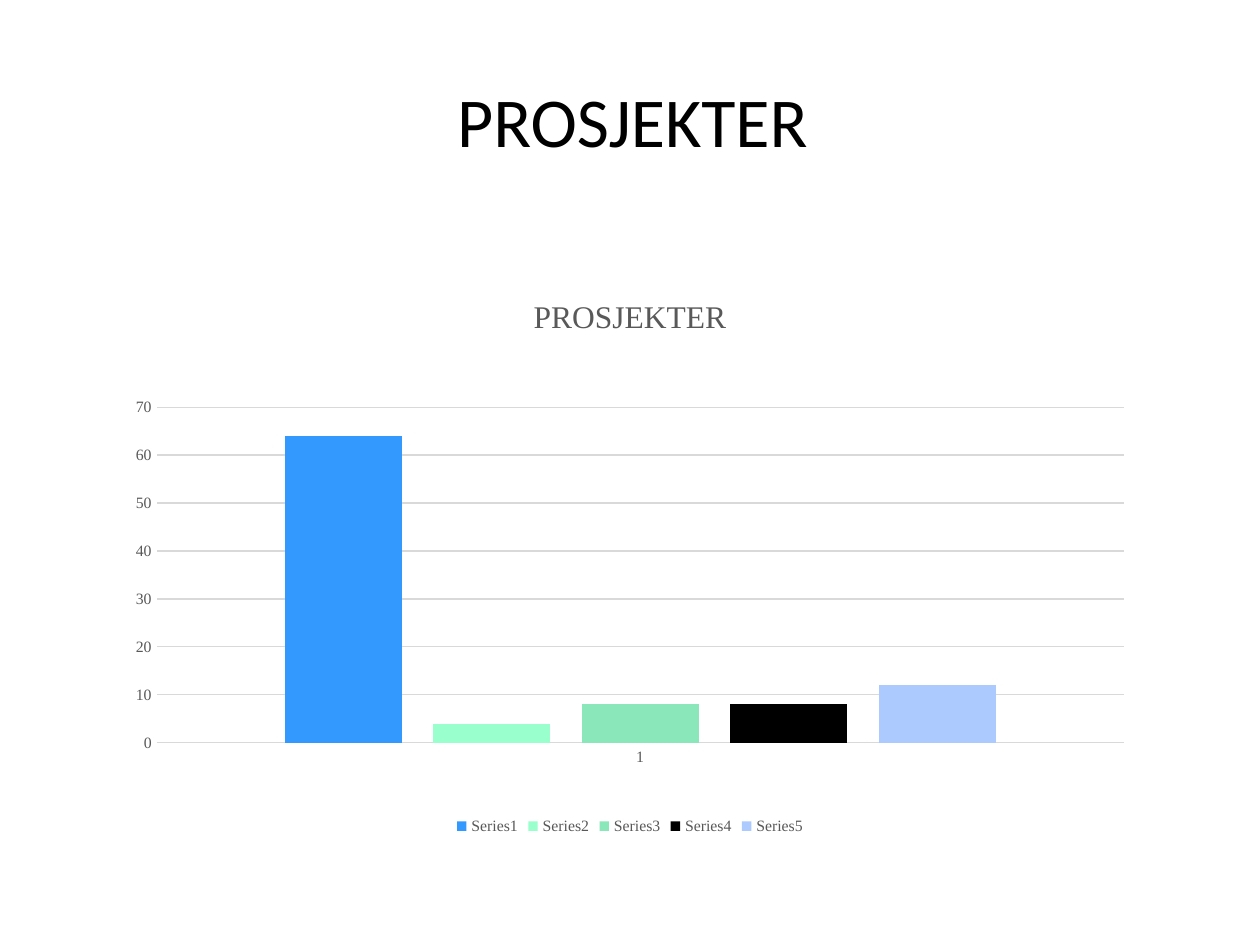
from lxml import etree
from pptx import Presentation
from pptx.chart.data import CategoryChartData
from pptx.dml.color import RGBColor
from pptx.enum.chart import XL_CHART_TYPE, XL_LEGEND_POSITION, XL_TICK_MARK
from pptx.enum.text import MSO_ANCHOR, PP_ALIGN
from pptx.oxml.ns import qn
from pptx.util import Inches, Pt

CLUSTERED = XL_CHART_TYPE.COLUMN_CLUSTERED
LEGEND_BOTTOM = XL_LEGEND_POSITION.BOTTOM
NO_TICK = XL_TICK_MARK.NONE
MIDDLE = MSO_ANCHOR.MIDDLE
CENTER = PP_ALIGN.CENTER

WIDTH, HEIGHT = Inches(10), Inches(7.5)
TITLE_FONT, CHART_FONT = "Calibri", "Times New Roman"
COLORS = {
    "text": "000000",
    "chart_text": "595959",
    "rule": "D9D9D9",
    "Series1": "3399FF",
    "Series2": "99FFCC",
    "Series3": "8AE7B9",
    "Series4": "000000",
    "Series5": "ADCAFF",
}
PROJECTS = {"Series1": 64, "Series2": 4, "Series3": 8, "Series4": 8, "Series5": 12}
# Inner plot area as shares of the chart
PLOT_AREA = {"x": 0.058, "y": 0.236, "w": 0.903, "h": 0.592}


def color(name):
    return RGBColor.from_string(COLORS[name])


def style_font(font, name, size, color_name):
    font.name = name
    font.size = Pt(size)
    font.bold = False
    font.color.rgb = color(color_name)


def style_rule(line):
    line.color.rgb = color("rule")
    line.width = Pt(0.75)


def write_run(text_frame, text, font_name, size, color_name):
    paragraph = text_frame.paragraphs[0]
    paragraph.alignment = CENTER
    run = paragraph.add_run()
    run.text = text
    style_font(run.font, font_name, size, color_name)


def fill_title(slide, text):
    title = slide.shapes.title
    title.left, title.top = Inches(1.18), Inches(0.36)
    title.width, title.height = Inches(7.68), Inches(1.18)
    title.text_frame.vertical_anchor = MIDDLE
    write_run(title.text_frame, text, TITLE_FONT, 40, "text")


def place_plot_area(chart):
    plot_area = chart.plots[0]._element.getparent()
    for old_layout in plot_area.findall(qn("c:layout")):
        plot_area.remove(old_layout)
    layout = etree.Element(qn("c:layout"))
    manual = etree.SubElement(layout, qn("c:manualLayout"))
    settings = {"layoutTarget": "inner", "xMode": "edge", "yMode": "edge", **PLOT_AREA}
    for tag, value in settings.items():
        etree.SubElement(manual, qn(f"c:{tag}")).set("val", str(value))
    plot_area.insert(0, layout)


def style_axes(chart):
    for axis in (chart.category_axis, chart.value_axis):
        axis.major_tick_mark = axis.minor_tick_mark = NO_TICK
        style_font(axis.tick_labels.font, CHART_FONT, 9, "chart_text")
    style_rule(chart.category_axis.format.line)
    chart.value_axis.format.line.fill.background()
    chart.value_axis.has_major_gridlines = True
    style_rule(chart.value_axis.major_gridlines.format.line)
    chart.value_axis.minimum_scale = 0
    chart.value_axis.maximum_scale = 70
    chart.value_axis.major_unit = 10


def add_column_chart(slide, title, values):
    data = CategoryChartData()
    data.categories = ["1"]
    for name, value in values.items():
        data.add_series(name, [value])
    chart = slide.shapes.add_chart(
        CLUSTERED, int(WIDTH * 0.075), Inches(2.17), int(WIDTH * 0.85), int(HEIGHT * 0.6), data
    ).chart
    style_font(chart.font, CHART_FONT, 10, "text")

    # Columns
    plot = chart.plots[0]
    plot.gap_width, plot.overlap = 219, -27
    plot.vary_by_categories = False
    for series in plot.series:
        series.format.fill.solid()
        series.format.fill.fore_color.rgb = color(series.name)

    # Chart title, axes and legend
    chart.has_title = True
    write_run(chart.chart_title.text_frame, title, CHART_FONT, 18, "chart_text")
    chart.chart_title.include_in_layout = False
    style_axes(chart)
    chart.has_legend = True
    chart.legend.position = LEGEND_BOTTOM
    chart.legend.include_in_layout = False
    style_font(chart.legend.font, CHART_FONT, 9, "chart_text")
    place_plot_area(chart)


def main():
    presentation = Presentation()
    presentation.slide_width, presentation.slide_height = WIDTH, HEIGHT
    slide = presentation.slides.add_slide(presentation.slide_layouts[5])
    fill_title(slide, "PROSJEKTER")
    add_column_chart(slide, "PROSJEKTER", PROJECTS)
    presentation.save("out.pptx")


if __name__ == "__main__":
    main()
